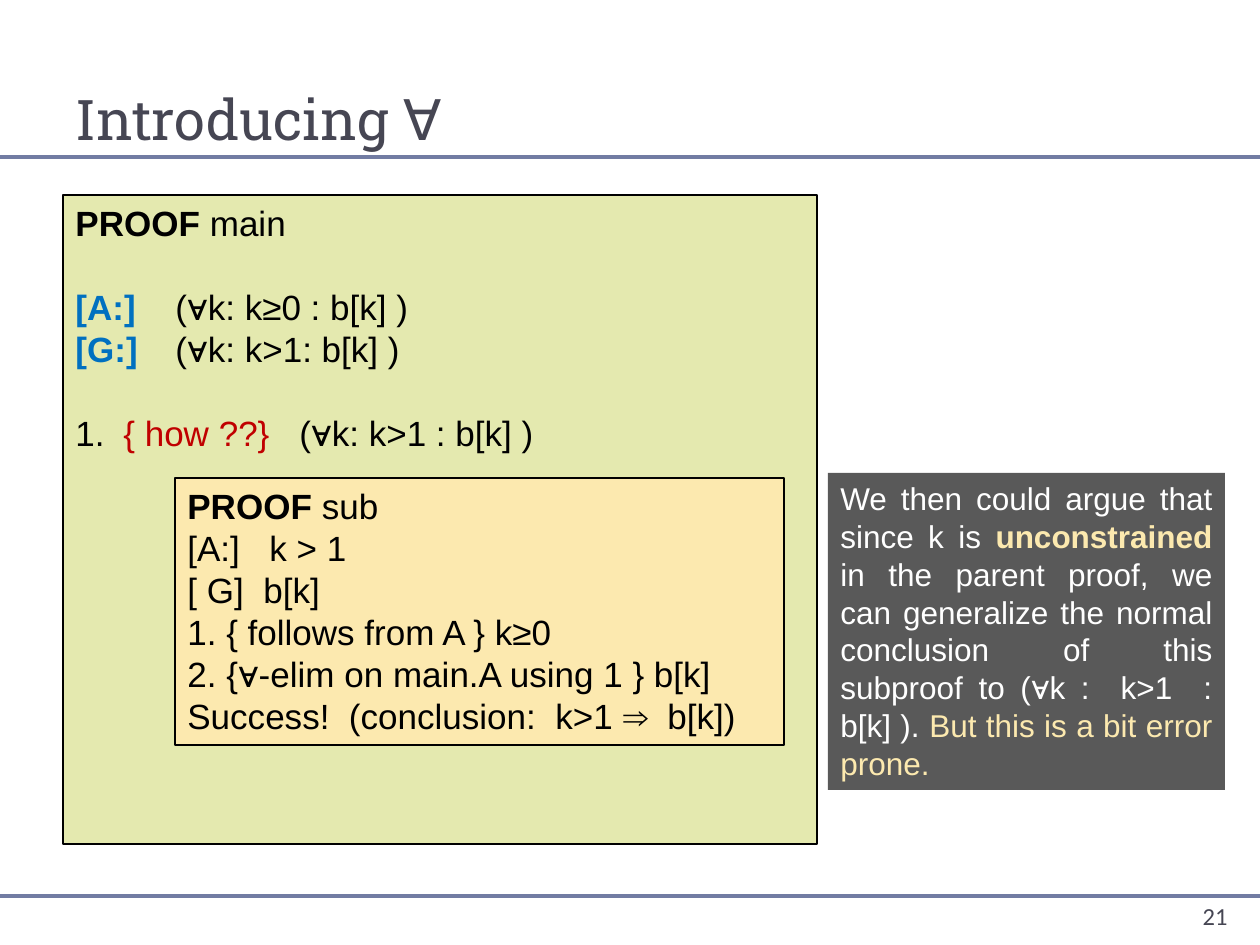
from lxml import etree
from pptx import Presentation
from pptx.dml.color import RGBColor
from pptx.enum.shapes import MSO_CONNECTOR, MSO_SHAPE
from pptx.enum.text import MSO_ANCHOR, PP_ALIGN
from pptx.oxml.ns import qn
from pptx.util import Emu, Pt

STRAIGHT = MSO_CONNECTOR.STRAIGHT
RECTANGLE = MSO_SHAPE.RECTANGLE
TOP, BOTTOM = MSO_ANCHOR.TOP, MSO_ANCHOR.BOTTOM
LEFT, RIGHT, JUSTIFY = PP_ALIGN.LEFT, PP_ALIGN.RIGHT, PP_ALIGN.JUSTIFY
SCALE = 914400 // 126
SLIDE_WIDTH, SLIDE_HEIGHT = 1260, 945
LINE_FACTOR = 1.2

COLORS = {
    "rule": "727CA3",
    "title": "464653",
    "black": "000000",
    "white": "FFFFFF",
    "blue": "0070C0",
    "red": "C00000",
    "green": "E4E9AF",
    "cream": "FCE9AF",
    "gray": "595959",
}


def px(length):
    """Convert whole pixels to EMU."""
    return Emu(length * SCALE)


def color(name):
    """Return the named colour."""
    return RGBColor.from_string(COLORS[name])


def add_rule(slide, y):
    """Draw a horizontal rule across the slide."""
    rule = slide.shapes.add_connector(STRAIGHT, 0, px(y), px(SLIDE_WIDTH), px(y))
    rule.line.color.rgb = color("rule")
    rule.line.width = Pt(2.25)
    etree.SubElement(rule._element.spPr, qn("a:effectLst"))


def add_run(paragraph, text, size, font, color_name, bold=False):
    """Append one formatted run to a paragraph."""
    run = paragraph.add_run()
    run.text = text
    run.font.size = Pt(size)
    run.font.name = font
    run.font.bold = bold
    run.font.color.rgb = color(color_name)


def add_tab_stops(paragraph, positions):
    """Set left tab stops on a paragraph."""
    tab_list = etree.SubElement(paragraph._p.get_or_add_pPr(), qn("a:tabLst"))
    for position in positions:
        etree.SubElement(tab_list, qn("a:tab"), pos=str(px(position)), algn="l")


def add_label(slide, box, text, size, font, align=LEFT, anchor=TOP):
    """Add a single-line text box."""
    frame = slide.shapes.add_textbox(*map(px, box)).text_frame
    frame.word_wrap = True
    frame.vertical_anchor = anchor
    paragraph = frame.paragraphs[0]
    paragraph.alignment = align
    add_run(paragraph, text, size, font, "title")


def add_panel(slide, box, fill, size, rows, align=LEFT, outlined=True):
    """Add a filled panel with rows of (runs, tab stops, blank lines above)."""
    panel = slide.shapes.add_shape(RECTANGLE, *map(px, box))
    panel.shadow.inherit = False
    panel.fill.solid()
    panel.fill.fore_color.rgb = color(fill)
    if outlined:
        panel.line.color.rgb = color("black")
        panel.line.width = Pt(0.75)
    else:
        panel.line.fill.background()
    frame = panel.text_frame
    frame.word_wrap = True
    frame.vertical_anchor = TOP
    for index, (runs, tabs, blank_lines) in enumerate(rows):
        paragraph = frame.add_paragraph() if index else frame.paragraphs[0]
        paragraph.alignment = align
        paragraph.line_spacing = Pt(size * LINE_FACTOR)
        paragraph.space_before = Pt(size * LINE_FACTOR * blank_lines)
        if tabs:
            add_tab_stops(paragraph, tabs)
        for text, color_name, bold in runs:
            add_run(paragraph, text, size, "Arial", color_name, bold)


def plain(text, tabs=()):
    """Return a row of plain black text."""
    return [(text, "black", False)], tabs, 0


def heading(name):
    """Return the opening row of a proof."""
    return [("PROOF", "black", True), (f" {name}", "black", False)], (), 0


def statement(label, formula, blank_lines):
    """Return a labelled row of the main proof."""
    return [(f"{label}\t", "blue", True), (formula, "black", False)], (100,), blank_lines


def main():
    """Build and save the slide."""
    presentation = Presentation()
    presentation.slide_width = px(SLIDE_WIDTH)
    presentation.slide_height = px(SLIDE_HEIGHT)
    slide = presentation.slides.add_slide(presentation.slide_layouts[6])

    for y in (157, 896):
        add_rule(slide, y)
    add_label(slide, (63, 32, 1134, 126), "Introducing ∀", 32, "Roboto Slab", anchor=BOTTOM)
    add_label(slide, (987, 895, 253, 50), "21", 14, "Calibri", align=RIGHT)

    step = [
        ("1.\t", "black", False),
        ("{ how ??}\t", "red", False),
        ("(∀k: k>1 : b[k] )", "black", False),
    ]
    add_panel(slide, (63, 195, 754, 649), "green", 20, [
        heading("main"),
        statement("[A:]", "(∀k: k≥0 : b[k] )", 1),
        statement("[G:]", "(∀k: k>1: b[k] )", 0),
        (step, (48, 224), 1),
    ])
    add_panel(slide, (175, 478, 609, 267), "cream", 20, [
        heading("sub"),
        plain("[A:]\tk > 1", (82,)),
        plain("[ G]\tb[k]", (76,)),
        plain("1. { follows from A } k≥0"),
        plain("2. {∀-elim on main.A using 1 } b[k]"),
        plain("Success!  (conclusion:  k>1 ⇒  b[k])"),
    ])
    argument = [
        ("We then could argue that since k is ", "white", False),
        ("unconstrained", "cream", True),
        (" in the parent proof, we can generalize the normal conclusion of this "
         "subproof to (∀k :  k>1  : b[k] ). ", "white", False),
        ("But this is a bit error prone.", "cream", False),
    ]
    add_panel(slide, (828, 473, 397, 317), "gray", 18, [(argument, (), 0)], JUSTIFY, False)

    presentation.save("out.pptx")


if __name__ == "__main__":
    main()
